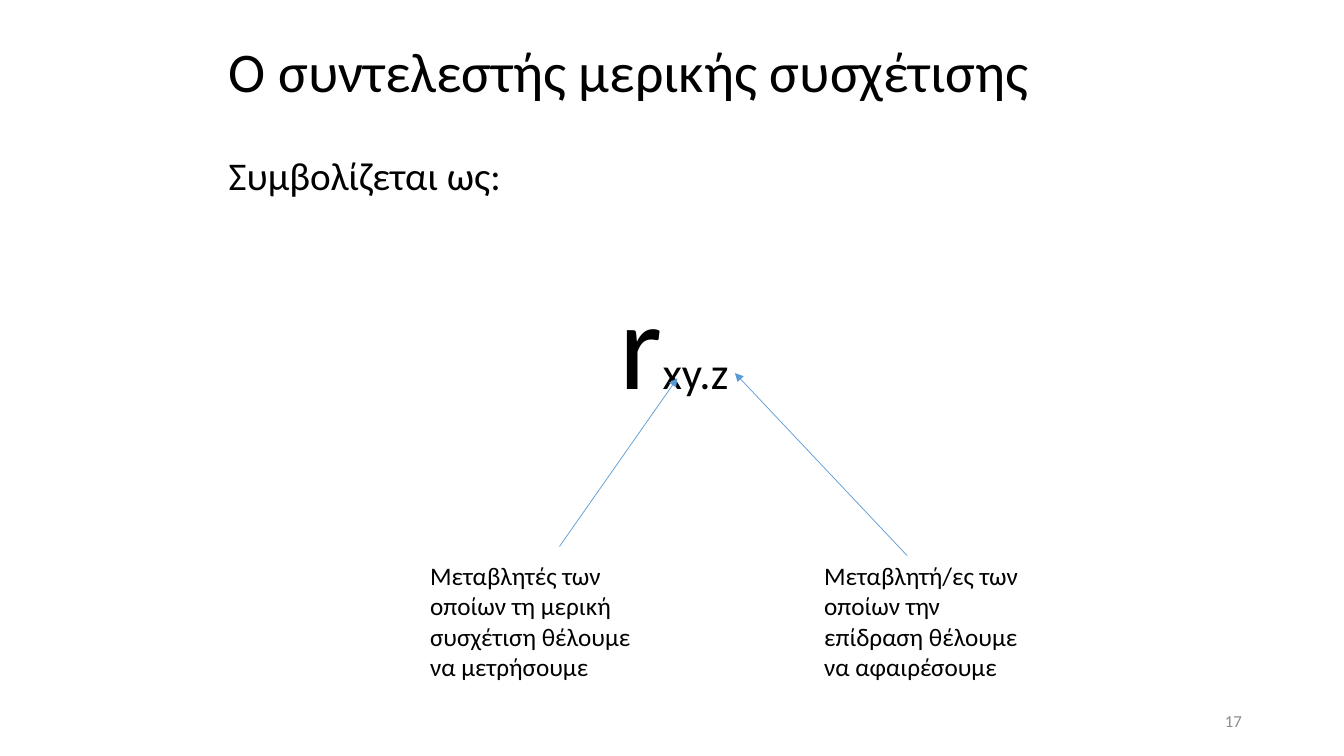
"""Builds a slide explaining the notation of the partial correlation coefficient."""
from lxml import etree
from pptx import Presentation
from pptx import util as u
from pptx.dml import color
from pptx.enum import shapes, text
from pptx.oxml import ns

BLACK, GREY, BLUE = "000000", "8C8C8C", "5B9BD5"


def paint(target, hex_colour):
    target.rgb = color.RGBColor.from_string(hex_colour)


def style_font(font, size, hex_colour=BLACK):
    font.name = "Calibri"
    font.size = u.Pt(size)
    paint(font.color, hex_colour)


def fill_placeholder(placeholder, box, wording, size, anchor):
    placeholder.left, placeholder.top, placeholder.width, placeholder.height = map(u.Cm, box)
    frame = placeholder.text_frame
    frame.text = wording
    frame.vertical_anchor = anchor
    frame.auto_size = text.MSO_AUTO_SIZE.NONE
    paragraph = frame.paragraphs[0]
    properties = paragraph._p.get_or_add_pPr()
    properties.set("marL", "0")
    properties.set("indent", "0")
    etree.SubElement(properties, ns.qn("a:buNone"))
    paragraph.alignment = text.PP_ALIGN.LEFT
    paragraph.line_spacing = 0.9
    paragraph.space_before = u.Pt(0)
    style_font(paragraph.font, size)


def add_text(slide, box, wording, size, alignment=text.PP_ALIGN.LEFT, hex_colour=BLACK):
    frame = slide.shapes.add_textbox(*map(u.Cm, box)).text_frame
    frame.word_wrap = True
    paragraph = frame.paragraphs[0]
    paragraph.text = wording
    paragraph.alignment = alignment
    style_font(paragraph.font, size, hex_colour)
    return frame


def add_symbol(slide, box):
    frame = add_text(slide, box, "r", 88, text.PP_ALIGN.CENTER)
    subscript = frame.paragraphs[0].add_run()
    subscript.text = "xy.z"
    subscript.font.size = u.Pt(32)


def add_arrow(slide, start, end):
    arrow = slide.shapes.add_connector(
        shapes.MSO_CONNECTOR.STRAIGHT, *map(u.Cm, start + end))
    paint_line = arrow.line
    paint_line.fill.solid()
    paint(paint_line.color, BLUE)
    paint_line.width = u.Pt(0.5)
    properties = arrow._element.spPr
    etree.SubElement(properties.find(ns.qn("a:ln")), ns.qn("a:tailEnd"), type="triangle")
    etree.SubElement(properties, ns.qn("a:effectLst"))


def add_explanation(slide, left, wording, start, end):
    add_arrow(slide, start, end)
    frame = add_text(slide, (left, 14, 5.72, 3.33), wording, 18)
    frame.auto_size = text.MSO_AUTO_SIZE.SHAPE_TO_FIT_TEXT


def main():
    presentation = Presentation()
    presentation.slide_width, presentation.slide_height = u.Cm(33.87), u.Cm(19.05)
    slide = presentation.slides.add_slide(presentation.slide_layouts[1])
    fill_placeholder(slide.shapes.title, (5.51, 0.76, 22.86, 2.21),
                     "Ο συντελεστής μερικής συσχέτισης", 40, text.MSO_ANCHOR.MIDDLE)
    fill_placeholder(slide.placeholders[1], (5.51, 3.81, 22.86, 1.9),
                     "Συμβολίζεται ως:", 28, text.MSO_ANCHOR.TOP)
    page_number = add_text(slide, (23.93, 17.65, 7.62, 1.02), "17", 12,
                           text.PP_ALIGN.RIGHT, GREY)
    page_number.vertical_anchor = text.MSO_ANCHOR.MIDDLE
    add_symbol(slide, (5.56, 6.58, 22.86, 3.78))
    add_explanation(slide, 10.59,
                    "Μεταβλητές των οποίων τη μερική συσχέτιση θέλουμε να μετρήσουμε",
                    (14.1, 13.77), (17.07, 9.53))
    add_explanation(slide, 20.52,
                    "Μεταβλητή/ες των οποίων την επίδραση θέλουμε να αφαιρέσουμε",
                    (22.86, 14), (18.52, 9.4))
    presentation.save("out.pptx")


if __name__ == "__main__":
    main()
